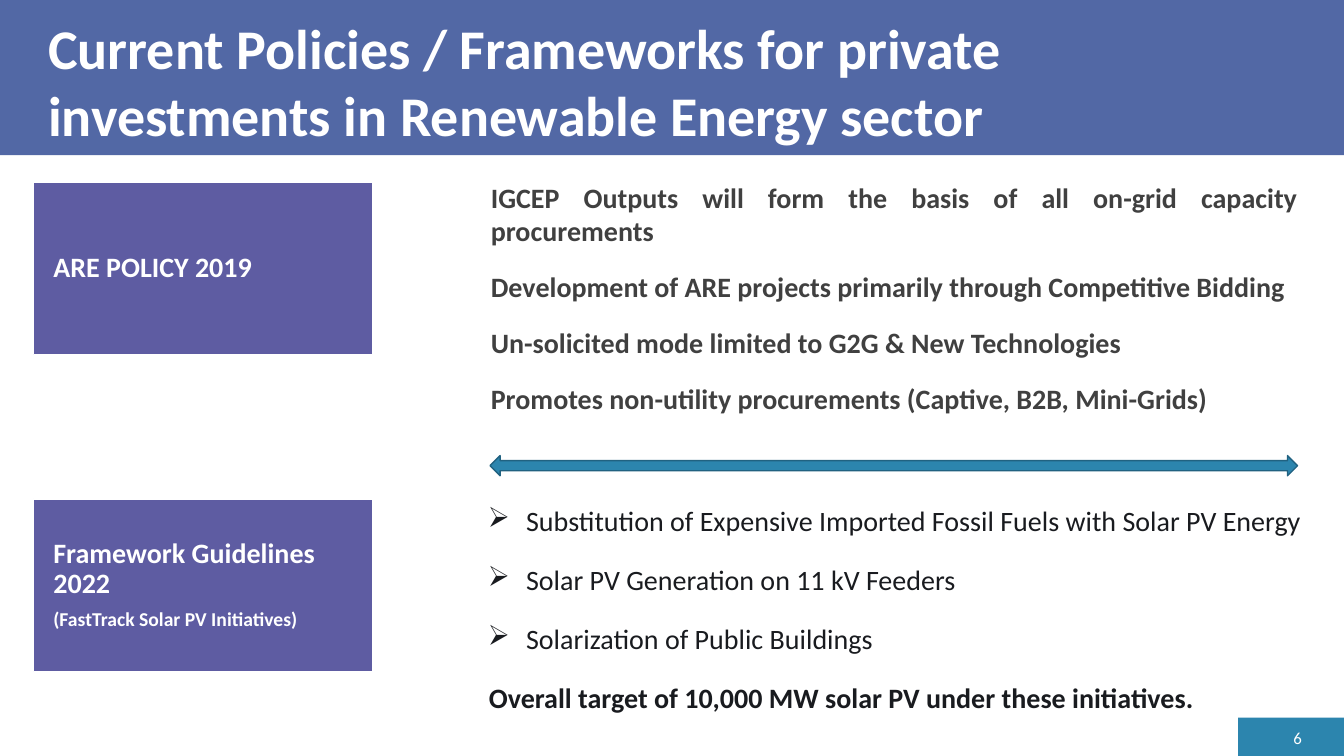
from lxml import etree
from pptx import Presentation
from pptx.dml.color import RGBColor
from pptx.enum.shapes import MSO_SHAPE as SHAPE
from pptx.enum.text import MSO_ANCHOR as ANCHOR, PP_ALIGN as ALIGN
from pptx.oxml.ns import qn
from pptx.util import Inches, Pt

WHITE = RGBColor(0xFF, 0xFF, 0xFF)
TEAL = RGBColor(0x2C, 0x85, 0xAE)
DARK_TEAL = RGBColor(0x21, 0x62, 0x81)
BLUE = RGBColor(0x52, 0x68, 0xA5)
PURPLE = RGBColor(0x5E, 0x5C, 0xA2)
GREY = RGBColor(0x40, 0x40, 0x40)
INK = RGBColor(0x19, 0x1B, 0x1F)


def add_text(tf, text, size=20, color=WHITE, bold=False, align=ALIGN.LEFT,
             before=0, after=0, spacing=1.0, margin=0, bullet=None, hang=0.38):
    """Add one paragraph to a text frame, filling the empty first one."""
    first = not tf.paragraphs[0].runs
    p = tf.paragraphs[0] if first else tf.add_paragraph()
    pPr = p._p.get_or_add_pPr()
    if margin:
        pPr.set("marL", str(Inches(margin)))
    if bullet:
        pPr.set("indent", str(Inches(-hang)))
        etree.SubElement(pPr, qn("a:buChar")).set("char", bullet)
    p.alignment = align
    p.space_before = Pt(0 if first else before)
    p.space_after = Pt(after)
    p.line_spacing = spacing
    r = p.add_run()
    r.text = text
    r.font.name = "Calibri"
    r.font.size = Pt(size)
    r.font.bold = bold
    r.font.color.rgb = color


class SlideBuilder:
    def __init__(self, slide):
        self.slide = slide

    def shape(self, kind, x, y, w, h, fill, line=None):
        sp = self.slide.shapes.add_shape(kind, *map(Inches, (x, y, w, h)))
        sp.shadow.inherit = False
        sp.fill.solid()
        sp.fill.fore_color.rgb = fill
        if line is None:
            sp.line.fill.background()
        else:
            sp.line.color.rgb = line
            sp.line.width = Pt(1)
        return sp

    def text_box(self, x, y, w, h, anchor=ANCHOR.TOP):
        sp = self.slide.shapes.add_textbox(*map(Inches, (x, y, w, h)))
        tf = sp.text_frame
        tf.word_wrap = True
        tf.vertical_anchor = anchor
        return tf

    def label(self, y, lines):
        sp = self.shape(SHAPE.RECTANGLE, 0.33, y, 3.37, 1.71, PURPLE, WHITE)
        tf = sp.text_frame
        tf.word_wrap = True
        tf.vertical_anchor = ANCHOR.MIDDLE
        tf.margin_left = tf.margin_right = Inches(0.2)
        tf.margin_top = tf.margin_bottom = Inches(0.2)
        for text, size in lines:
            add_text(tf, text, size=size, bold=True, spacing=0.9, after=7)


def main():
    prs = Presentation()
    prs.slide_width, prs.slide_height = Inches(13.33), Inches(7.5)
    s = SlideBuilder(prs.slides.add_slide(prs.slide_layouts[6]))

    # Title band and page number
    s.shape(SHAPE.RECTANGLE, 12.28, 7.12, 1.05, 0.38, TEAL)
    s.shape(SHAPE.RECTANGLE, 0, 0, 13.33, 1.54, BLUE)
    add_text(s.text_box(12.6, 7.2, 0.41, 0.23, ANCHOR.MIDDLE), "6",
             size=12, align=ALIGN.RIGHT)
    add_text(s.text_box(0.38, 0.08, 12.57, 1.45),
             "Current Policies / Frameworks for private investments "
             "in Renewable Energy sector", size=40, bold=True)

    # Policy points
    tf = s.text_box(4.77, 1.74, 8.2, 2.12)
    for text in (
        "IGCEP Outputs will form the basis of all on-grid capacity procurements",
        "Development of ARE projects primarily through Competitive Bidding",
        "Un-solicited mode limited to G2G & New Technologies",
        "Promotes non-utility procurements (Captive, B2B, Mini-Grids)",
    ):
        add_text(tf, text, color=GREY, bold=True, align=ALIGN.JUSTIFY,
                 before=8, after=8)

    # Labels on the left
    s.label(1.81, [("ARE POLICY 2019", 20)])
    s.label(4.95, [("Framework Guidelines 2022", 20),
                   ("(FastTrack Solar PV Initiatives)", 14)])

    # Framework initiatives and target
    tf = s.text_box(3.81, 4.95, 9.5, 2.43)
    initiative = dict(color=INK, align=ALIGN.JUSTIFY, before=12, after=6)
    for text in (
        "Substitution of Expensive Imported Fossil Fuels with Solar PV Energy",
        "Solar PV Generation on 11 kV Feeders",
        "Solarization of Public Buildings",
    ):
        add_text(tf, text, margin=1.31, bullet="➢", **initiative)
    add_text(tf, "Overall target of 10,000 MW solar PV under these initiatives.",
             margin=0.94, bold=True, **initiative)

    # Divider arrow
    s.shape(SHAPE.LEFT_RIGHT_ARROW, 4.86, 4.52, 8.01, 0.2, TEAL, DARK_TEAL)

    prs.save("out.pptx")


if __name__ == "__main__":
    main()
